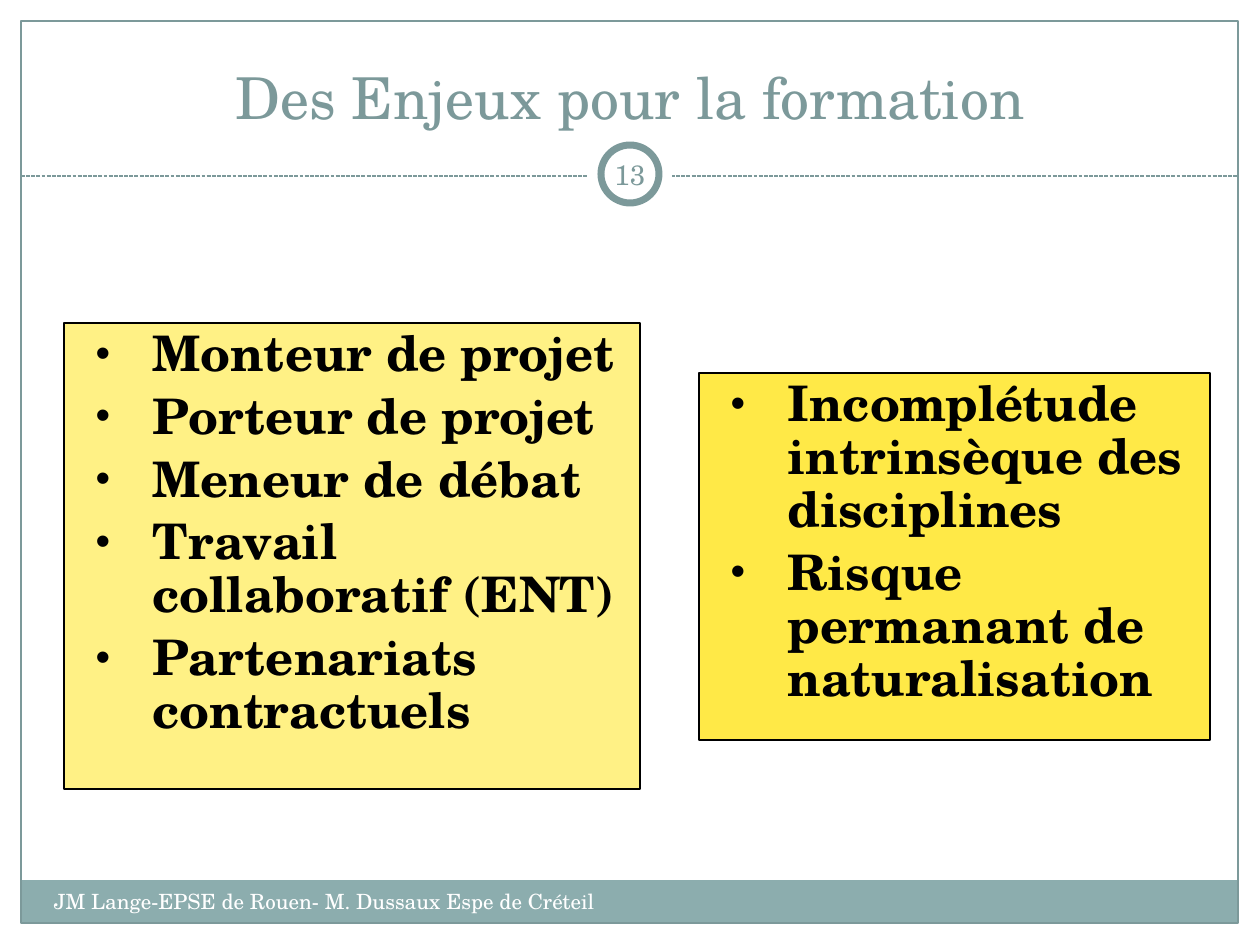
import pptx
import pptx.util
import pptx.dml.color
import pptx.enum.dml
import pptx.enum.shapes
import pptx.enum.text
import lxml.etree

PX = 914400 / 126
FONT = "TeX Gyre Schola"
HEX = {"teal": "7C999A", "band": "8CADAE", "white": "FFFFFF",
       "black": "000000", "pale": "FFF185", "gold": "FFE947"}
ROLES = ["Monteur de projet", "Porteur de projet", "Meneur de débat",
         "Travail collaboratif (ENT)", "Partenariats contractuels"]
RISKS = ["Incomplétude intrinsèque des disciplines",
         "Risque permanant de naturalisation"]

Pt = pptx.util.Pt
Kind = pptx.enum.shapes.MSO_SHAPE
Align = pptx.enum.text.PP_ALIGN
Anchor = pptx.enum.text.MSO_ANCHOR


def emu(*px):
    return [round(n * PX) for n in px]


def tint(name):
    return pptx.dml.color.RGBColor.from_string(HEX[name])


def place(item, box):
    item.left, item.top, item.width, item.height = emu(*box)


def paint(item, fill=None, line=None, width=0.75):
    if fill:
        item.fill.solid()
        item.fill.fore_color.rgb = tint(fill)
    else:
        item.fill.background()
    if line:
        item.line.color.rgb = tint(line)
        item.line.width = Pt(width)
    else:
        item.line.fill.background()


def shape(slide, kind, box, **look):
    item = slide.shapes.add_shape(kind, *emu(*box))
    item.shadow.inherit = False
    paint(item, **look)
    return item


def style(par, size, color, align=Align.LEFT, bold=False):
    par.alignment = align
    font = par.font
    font.name, font.size, font.bold = FONT, Pt(size), bold
    font.color.rgb = tint(color)


def bullet(par):
    props = par._p.get_or_add_pPr()
    left, hang = emu(76, -57)
    props.set("marL", str(left))
    props.set("indent", str(hang))
    space = props.nsmap["a"]

    def add(parent, tag, **attrs):
        return lxml.etree.SubElement(parent, f"{{{space}}}{tag}", **attrs)

    add(add(props, "buClr"), "srgbClr", val=HEX["black"])
    add(props, "buSzPct", val="85000")
    add(props, "buFont", typeface="Arial")
    add(props, "buChar", char="•")


def frame(slide, box):
    """Draw the slide border, the dashed rule and the footer band."""
    x, y, w, h = box
    foot = 43
    band = shape(slide, Kind.RECTANGLE, (x, y + h - foot, w, foot), fill="band")
    shape(slide, Kind.RECTANGLE, box, line="teal")

    rule = slide.shapes.add_connector(
        pptx.enum.shapes.MSO_CONNECTOR.STRAIGHT,
        *emu(x, y + 155, x + w, y + 155))
    rule.line.color.rgb = tint("teal")
    rule.line.width = Pt(0.75)
    rule.line.dash_style = pptx.enum.dml.MSO_LINE.SQUARE_DOT
    props = rule._element.spPr
    lxml.etree.SubElement(props, f"{{{props.nsmap['a']}}}effectLst")

    text = band.text_frame
    text.vertical_anchor = Anchor.MIDDLE
    text.margin_left, = emu(33)
    text.text = "JM Lange-EPSE de Rouen- M. Dussaux Espe de Créteil"
    style(text.paragraphs[0], 12, "white")


def badge(slide, box, number):
    """Draw the page number in a ring over a white disc."""
    x, y, w, h = box
    gap = 13
    shape(slide, Kind.OVAL, box, fill="white")
    ring = shape(slide, Kind.OVAL,
                 (x + gap, y + gap, w - 2 * gap, h - 2 * gap),
                 fill="white", line="teal", width=4)
    text = ring.text_frame
    text.word_wrap = False
    text.vertical_anchor = Anchor.MIDDLE
    text.margin_left = text.margin_right = 0
    text.margin_top = text.margin_bottom = 0
    text.text = number
    style(text.paragraphs[0], 16, "teal", Align.CENTER)


def head(slide, box, words):
    title = slide.shapes.title
    place(title, box)
    text = title.text_frame
    text.text = words
    text.vertical_anchor = Anchor.BOTTOM
    text.auto_size = pptx.enum.text.MSO_AUTO_SIZE.NONE
    style(text.paragraphs[0], 33, "teal", Align.CENTER)


def panel(body, box, items, fill):
    """Fill a body placeholder with a bold bulleted list."""
    place(body, box)
    paint(body, fill=fill, line="black")
    text = body.text_frame
    text.text = "\n".join(items)
    text.auto_size = pptx.enum.text.MSO_AUTO_SIZE.NONE
    for par in text.paragraphs:
        bullet(par)
        style(par, 28, "black", bold=True)
        par.line_spacing = 0.9
        par.space_before = Pt(5.6)


def main():
    deck = pptx.Presentation()
    deck.slide_width, deck.slide_height = emu(1260, 945)
    slide = deck.slides.add_slide(deck.slide_layouts.get_by_name("Two Content"))
    frame(slide, (21, 21, 1217, 902))
    badge(slide, (588, 132, 84, 84), "13")
    head(slide, (42, 32, 1176, 105), "Des Enjeux pour la formation")
    left, right = list(slide.placeholders)[1:]
    panel(left, (64, 323, 576, 466), ROLES, "pale")
    panel(right, (699, 373, 511, 367), RISKS, "gold")
    deck.save("out.pptx")


if __name__ == "__main__":
    main()
